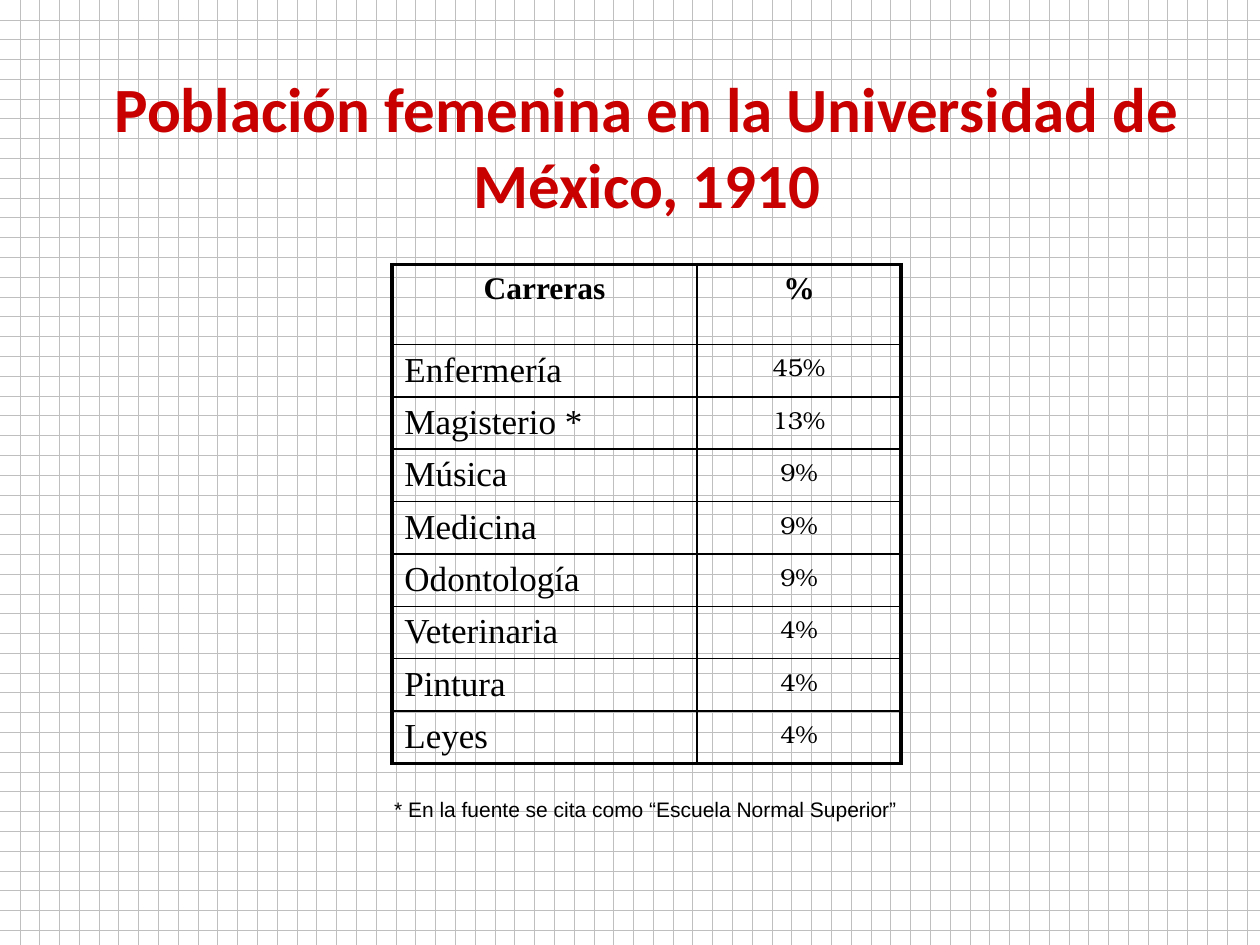
from typing import NamedTuple

from lxml.etree import SubElement
from pptx import Presentation
from pptx.dml.color import RGBColor
from pptx.enum.dml import MSO_PATTERN_TYPE as Pattern
from pptx.enum.text import MSO_ANCHOR as Anchor, MSO_AUTO_SIZE as AutoSize, PP_ALIGN as Align
from pptx.oxml.ns import qn
from pptx.util import Inches, Pt

WHITE = RGBColor(0xFF, 0xFF, 0xFF)
BLACK = RGBColor(0x00, 0x00, 0x00)
GRID_GRAY = RGBColor(0xBF, 0xBF, 0xBF)
TITLE_RED = RGBColor(0xC9, 0x00, 0x00)

SLIDE_WIDTH, SLIDE_HEIGHT = 10, 7.5
THIN, THICK = 1, 2.25


class Box(NamedTuple):
    """Left, top, width and height as percentages of the slide."""
    left: float
    top: float
    width: float
    height: float

    def lengths(self) -> list:
        sides = (SLIDE_WIDTH, SLIDE_HEIGHT) * 2
        return [Inches(share * side / 100) for share, side in zip(self, sides)]


class Style(NamedTuple):
    font: str
    size: float
    color: RGBColor = BLACK
    bold: bool = False
    align: Align = Align.LEFT


class Career(NamedTuple):
    name: str
    share: str


TITLE_STYLE = Style("Calibri", 36, TITLE_RED, True, Align.CENTER)
HEADER_STYLE = Style("Times New Roman", 18, bold=True, align=Align.CENTER)
NAME_STYLE = Style("Times New Roman", 20)
SHARE_STYLE = Style("TeX Gyre Bonum", 14, align=Align.CENTER)
NOTE_STYLE = Style("Arial", 12)

TITLE_BOX = Box(5.1, 7.07, 92.5, 16.67)
TABLE_BOX = Box(31.1, 28, 40.4, 52.8)
NOTE_BOX = Box(30.3, 83.6, 42.3, 4)
NAME_COLUMN_SHARE = 0.6
HEADER_ROW_SHARE = 0.16

HEADER = Career("Carreras", "%")
CAREERS = [
    Career("Enfermería", "45%"),
    Career("Magisterio *", "13%"),
    Career("Música", "9%"),
    Career("Medicina", "9%"),
    Career("Odontología", "9%"),
    Career("Veterinaria", "4%"),
    Career("Pintura", "4%"),
    Career("Leyes", "4%"),
]


def write(frame, text: str, style: Style):
    """Write one styled run into the first paragraph and return the paragraph."""
    paragraph = frame.paragraphs[0]
    paragraph.alignment = style.align
    run = paragraph.add_run()
    run.text = text
    run.font.name = style.font
    run.font.size = Pt(style.size)
    run.font.bold = style.bold
    run.font.color.rgb = style.color
    return paragraph


def add_text(slide, box: Box, text: str, style: Style, wrap: bool = True) -> None:
    frame = slide.shapes.add_textbox(*box.lengths()).text_frame
    frame.word_wrap = wrap
    frame.auto_size = AutoSize.NONE if wrap else AutoSize.SHAPE_TO_FIT_TEXT
    frame.vertical_anchor = Anchor.MIDDLE if wrap else Anchor.TOP
    write(frame, text, style)


def space_before(paragraph, percent: int) -> None:
    properties = paragraph._p.get_or_add_pPr()
    spacing = SubElement(properties, qn("a:spcBef"))
    SubElement(spacing, qn("a:spcPct"), val=str(percent * 1000))


def set_borders(cell, **widths: float) -> None:
    """Draw black borders; the keywords name the sides in schema order."""
    properties = cell._tc.get_or_add_tcPr()
    for index, (side, width) in enumerate(widths.items()):
        line = SubElement(properties, qn(f"a:ln{side}"), w=str(Pt(width)))
        fill = SubElement(line, qn("a:solidFill"))
        SubElement(fill, qn("a:srgbClr"), val=str(BLACK))
        properties.insert(index, line)


def add_career_table(slide, box: Box, rows: list[Career]) -> None:
    left, top, width, height = box.lengths()
    columns = len(Career._fields)
    table = slide.shapes.add_table(len(rows), columns, left, top, width, height).table
    table.first_row = table.horz_banding = False

    # Column widths and row heights
    table.columns[0].width = int(width * NAME_COLUMN_SHARE)
    table.columns[1].width = width - table.columns[0].width
    header_height = int(height * HEADER_ROW_SHARE)
    body_height = (height - header_height) // (len(rows) - 1)

    last = len(rows) - 1
    for row, career in enumerate(rows):
        table.rows[row].height = body_height if row else header_height
        for column, text in enumerate(career):
            cell = table.cell(row, column)
            cell.fill.background()
            style = (NAME_STYLE, SHARE_STYLE)[column] if row else HEADER_STYLE
            paragraph = write(cell.text_frame, text, style)
            if row:
                space_before(paragraph, 20)
            # Thick outer frame, thin inner lines
            set_borders(
                cell,
                L=THICK if column == 0 else THIN,
                R=THICK if column == columns - 1 else THIN,
                T=THICK if row == 0 else THIN,
                B=THICK if row == last else THIN,
            )


def main() -> None:
    presentation = Presentation()
    presentation.slide_width = Inches(SLIDE_WIDTH)
    presentation.slide_height = Inches(SLIDE_HEIGHT)
    slide = presentation.slides.add_slide(presentation.slide_layouts[6])

    # Squared-paper background
    background = slide.background.fill
    background.patterned()
    background.pattern = Pattern.DOTTED_GRID
    background.fore_color.rgb = GRID_GRAY
    background.back_color.rgb = WHITE

    # Title, table and footnote
    add_text(slide, TITLE_BOX, "Población femenina en la Universidad de México, 1910", TITLE_STYLE)
    add_career_table(slide, TABLE_BOX, [HEADER, *CAREERS])
    add_text(slide, NOTE_BOX, "* En la fuente se cita como “Escuela Normal Superior”",
             NOTE_STYLE, wrap=False)

    presentation.save("out.pptx")


if __name__ == "__main__":
    main()
